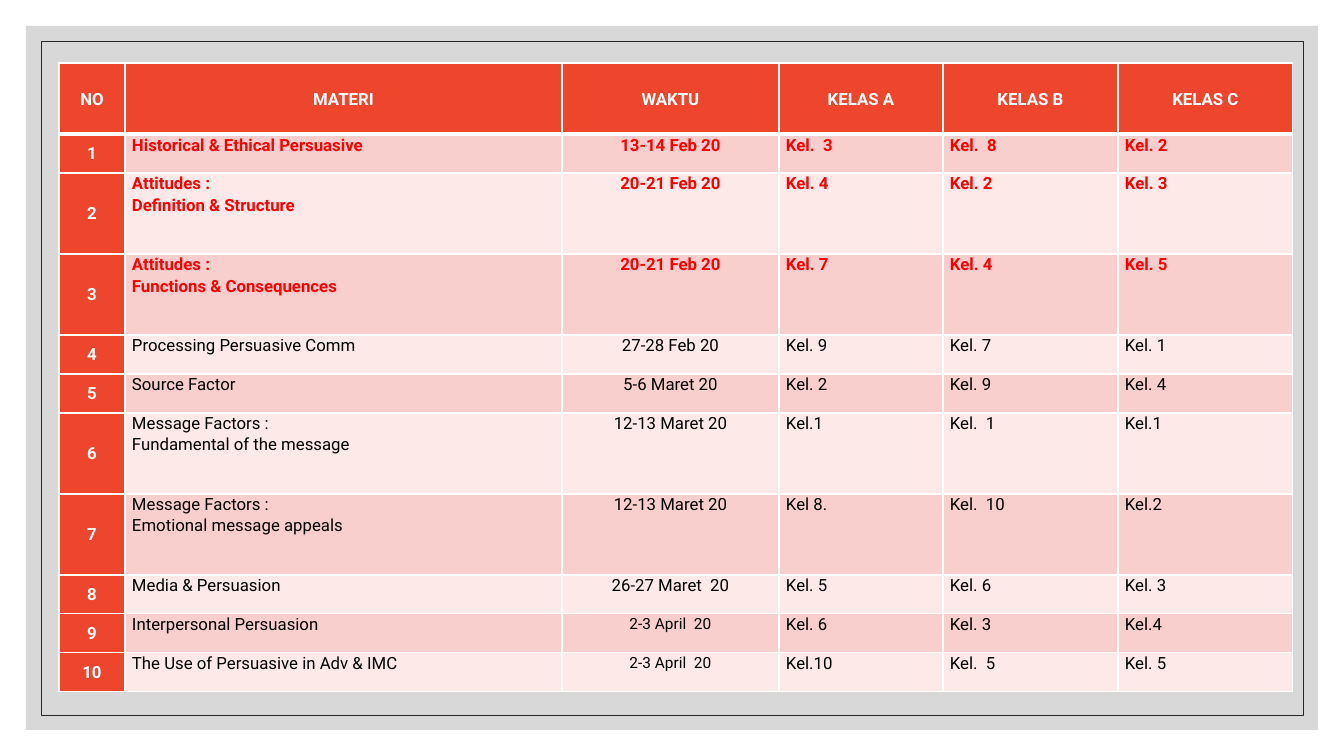
from dataclasses import dataclass

from lxml.etree import SubElement
from pptx import Presentation
from pptx.dml.color import RGBColor
from pptx.enum.shapes import MSO_SHAPE
from pptx.enum.text import MSO_ANCHOR, PP_ALIGN
from pptx.oxml import parse_xml
from pptx.oxml.ns import nsdecls, qn
from pptx.util import Emu, Pt

EMU_PER_INCH = 914400
PX_PER_INCH = 100.8


@dataclass(frozen=True)
class Theme:
    font: str = "Roboto"
    text_size: int = 12
    small_size: int = 11
    line_spacing: float = 1.07
    accent: str = "EE462D"
    bands: tuple = ("F8CFCD", "FCE9E8")
    white: str = "FFFFFF"
    done: str = "FF0000"
    upcoming: str = "000000"
    panel: str = "BFBFBF"
    panel_opacity: int = 60
    frame_line: str = "262626"
    frame_width: float = 0.5
    border_width: int = 1
    header_border_width: int = 3


THEME = Theme()
SLIDE_SIZE = (1344, 756)
PANEL_MARGIN = 26
FRAME_MARGIN = 41
TABLE_BOX = (59, 63)
COLUMN_WIDTHS = (66, 437, 217, 164, 175, 175)
HEADER_HEIGHT, SHORT_HEIGHT, TALL_HEIGHT = 71, 39, 81
CELL_INSET = 7
DONE_ROWS = 3
SMALL_DATE_FROM = 9
DATE_COLUMN = 2

HEADINGS = ("NO", "MATERI", "WAKTU", "KELAS A", "KELAS B", "KELAS C")
SESSIONS = (
    ("Historical & Ethical Persuasive", "13-14 Feb 20", "Kel.  3", "Kel.  8", "Kel. 2"),
    ("Attitudes : \nDefinition & Structure", "20-21 Feb 20", "Kel. 4", "Kel. 2", "Kel. 3"),
    ("Attitudes : \nFunctions & Consequences", "20-21 Feb 20", "Kel. 7", "Kel. 4", "Kel. 5"),
    ("Processing Persuasive Comm", "27-28 Feb 20", "Kel. 9", "Kel. 7", "Kel. 1"),
    ("Source Factor", "5-6 Maret 20", "Kel. 2", "Kel. 9", "Kel. 4"),
    ("Message Factors :\nFundamental of the message", "12-13 Maret 20", "Kel.1", "Kel.  1", "Kel.1"),
    ("Message Factors :\nEmotional message appeals", "12-13 Maret 20", "Kel 8.", "Kel.  10", "Kel.2"),
    ("Media & Persuasion", "26-27 Maret  20", "Kel. 5", "Kel. 6", "Kel. 3"),
    ("Interpersonal Persuasion", "2-3 April  20", "Kel. 6", "Kel. 3", "Kel.4"),
    ("The Use of Persuasive in Adv & IMC", "2-3 April  20", "Kel.10", "Kel.  5", "Kel. 5"),
)


def px(length):
    return Emu(round(length * EMU_PER_INCH / PX_PER_INCH))


def rgb(color):
    return RGBColor.from_string(color)


def set_attributes(target, values):
    for name, value in values.items():
        setattr(target, name, value)


def add_inset_rectangle(slide, margin):
    width, height = SLIDE_SIZE
    shape = slide.shapes.add_shape(
        MSO_SHAPE.RECTANGLE, px(margin), px(margin),
        px(width - 2 * margin), px(height - 2 * margin),
    )
    shape.shadow.inherit = False
    return shape


def add_backdrop(slide):
    panel = add_inset_rectangle(slide, PANEL_MARGIN)
    panel.fill.solid()
    panel.fill.fore_color.rgb = rgb(THEME.panel)
    panel.line.fill.background()
    color = panel.fill._xPr.find(qn("a:solidFill"))[0]
    SubElement(color, qn("a:alpha"), val=str(THEME.panel_opacity * 1000))

    frame = add_inset_rectangle(slide, FRAME_MARGIN)
    frame.fill.background()
    frame.line.color.rgb = rgb(THEME.frame_line)
    frame.line.width = Pt(THEME.frame_width)


def set_borders(cell, row):
    widths = {side: THEME.border_width for side in ("lnL", "lnR", "lnT", "lnB")}
    if row == 0:
        widths["lnB"] = THEME.header_border_width
    elif row == 1:
        widths["lnT"] = THEME.header_border_width
    properties = cell._tc.get_or_add_tcPr()
    for position, (side, width) in enumerate(widths.items()):
        properties.insert(position, parse_xml(
            f'<a:{side} {nsdecls("a")} w="{Pt(width)}"><a:solidFill>'
            f'<a:srgbClr val="{THEME.white}"/></a:solidFill></a:{side}>'
        ))


def cell_format(row, column):
    if row == 0 or column == 0:
        return THEME.accent, THEME.white, True, MSO_ANCHOR.MIDDLE, PP_ALIGN.CENTER
    done = row <= DONE_ROWS
    color = THEME.done if done else THEME.upcoming
    alignment = PP_ALIGN.CENTER if column == DATE_COLUMN else PP_ALIGN.JUSTIFY
    return THEME.bands[(row - 1) % 2], color, done, MSO_ANCHOR.TOP, alignment


def fill_cell(cell, text, row, column):
    background, color, bold, anchor, alignment = cell_format(row, column)
    small = column == DATE_COLUMN and row >= SMALL_DATE_FROM
    size = THEME.small_size if small else THEME.text_size
    set_attributes(cell, {
        "vertical_anchor": anchor,
        "margin_left": px(CELL_INSET), "margin_right": px(CELL_INSET),
        "margin_top": 0, "margin_bottom": 0,
    })
    cell.fill.solid()
    cell.fill.fore_color.rgb = rgb(background)
    set_borders(cell, row)
    cell.text_frame.text = text
    for paragraph in cell.text_frame.paragraphs:
        set_attributes(paragraph, {"alignment": alignment, "line_spacing": THEME.line_spacing})
        for run in paragraph.runs:
            set_attributes(run.font, {"name": THEME.font, "size": Pt(size), "bold": bold})
            run.font.color.rgb = rgb(color)


def add_schedule(slide, box):
    left, top = box
    rows = [HEADINGS] + [(str(number), *session) for number, session in enumerate(SESSIONS, 1)]
    heights = [HEADER_HEIGHT] + [
        TALL_HEIGHT if "\n" in session[0] else SHORT_HEIGHT for session in SESSIONS
    ]
    table = slide.shapes.add_table(
        len(rows), len(HEADINGS), px(left), px(top),
        px(sum(COLUMN_WIDTHS)), px(sum(heights)),
    ).table
    for column, width in zip(table.columns, COLUMN_WIDTHS):
        column.width = px(width)
    for row, height in zip(table.rows, heights):
        row.height = px(height)
    for row, texts in enumerate(rows):
        for column, text in enumerate(texts):
            fill_cell(table.cell(row, column), text, row, column)


def main():
    presentation = Presentation()
    presentation.slide_width, presentation.slide_height = map(px, SLIDE_SIZE)
    slide = presentation.slides.add_slide(presentation.slide_layouts[6])
    add_backdrop(slide)
    add_schedule(slide, TABLE_BOX)
    presentation.save("out.pptx")


if __name__ == "__main__":
    main()
